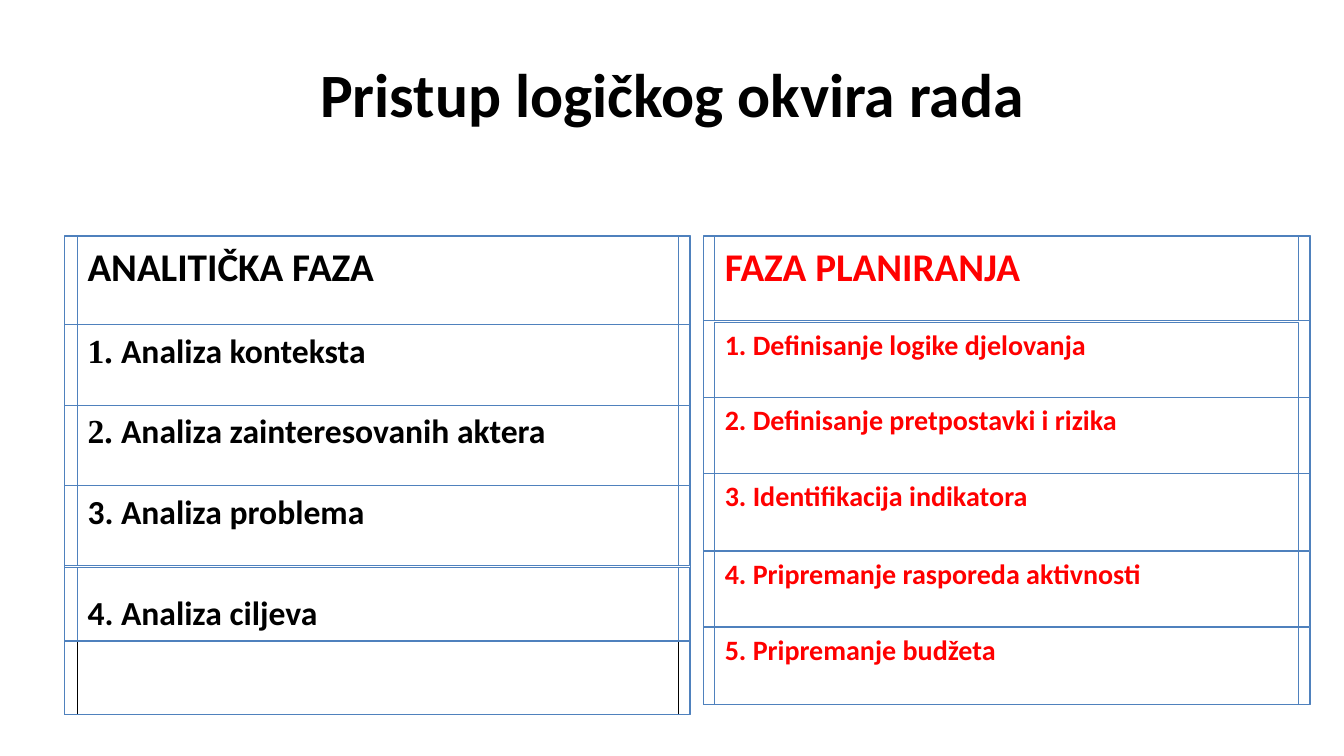
import pptx
import pptx.util
import pptx.dml.color
import pptx.enum.shapes
import pptx.enum.text

Inches = pptx.util.Inches
Pt = pptx.util.Pt
RGB = pptx.dml.color.RGBColor
BLACK = RGB(0x00, 0x00, 0x00)
RED = RGB(0xFF, 0x00, 0x00)
BLUE = RGB(0x4F, 0x81, 0xBD)
SANS = "Calibri"
SERIF = "Times New Roman"

# Each row: text runs, height, inner top drop, gap below, top inset, inner line
PLAIN = {"drop": 0, "gap": 0, "inset": 0.05, "line": BLUE}
LEFT = {
    "box": (0.64, 2.35, 6.2), "pad": (0.13, 0.11), "color": BLACK, "size": 24,
    "rows": [
        {"runs": [("ANALITIČKA FAZA", SANS)], "high": 0.87},
        {"runs": [("1. ", SERIF), ("Analiza konteksta", SANS)], "high": 0.8},
        {"runs": [("2. ", SERIF), ("Analiza zainteresovanih aktera", SANS)],
         "high": 0.8},
        {"runs": [("3. Analiza problema", SANS)], "high": 0.79, "gap": 0.02},
        {"runs": [("4. Analiza ciljeva", SANS)], "high": 0.73, "inset": 0.24},
        {"runs": [], "high": 0.73, "line": BLACK},
    ],
}
RIGHT = {
    "box": (6.98, 2.35, 6.01), "pad": (0.11, 0.11), "color": RED, "size": 20,
    "rows": [
        {"runs": [("FAZA PLANIRANJA", SANS)], "high": 0.83},
        {"runs": [("1. Definisanje logike djelovanja", SANS)],
         "high": 0.76, "drop": 0.02},
        {"runs": [("2. Definisanje pretpostavki i rizika", SANS)],
         "high": 0.76},
        {"runs": [("3. Identifikacija indikatora", SANS)],
         "high": 0.76, "gap": 0.01},
        {"runs": [("4. Pripremanje rasporeda aktivnosti", SANS)],
         "high": 0.75, "gap": 0.01},
        {"runs": [("5. Pripremanje budžeta", SANS)], "high": 0.76},
    ],
}
HEAD = 28


def style(item, form):
    for name, value in form.items():
        setattr(item, name, value)


def write(par, text, face, size, color):
    run = par.add_run()
    run.text = text
    style(run.font, {"name": face, "size": Pt(size), "bold": True})
    run.font.color.rgb = color


def frame(group, left, top, wide, high, color, width):
    rect = group.shapes.add_shape(
        pptx.enum.shapes.MSO_SHAPE.RECTANGLE,
        Inches(left), Inches(top), Inches(wide), Inches(high))
    rect.shadow.inherit = False
    rect.fill.background()
    rect.line.color.rgb = color
    rect.line.width = Pt(width)
    return rect


def title(slide, left, top, wide, high):
    head = slide.shapes.title
    style(head, {"left": Inches(left), "top": Inches(top),
                 "width": Inches(wide), "height": Inches(high)})
    head.text_frame.vertical_anchor = pptx.enum.text.MSO_ANCHOR.MIDDLE
    par = head.text_frame.paragraphs[0]
    par.alignment = pptx.enum.text.PP_ALIGN.CENTER
    write(par, "Pristup logičkog okvira rada", SANS, 44, BLACK)


def phase(slide, plan):
    group = slide.shapes.add_group_shape()
    left, start, wide = plan["box"]
    near, far = plan["pad"]
    top = start
    for index, part in enumerate(plan["rows"]):
        row = {**PLAIN, **part}
        # Inner cell with text
        cell = frame(group, left + near, top + row["drop"], wide - near - far,
                     row["high"] - row["drop"], row["line"], 0.75)
        body = cell.text_frame
        style(body, {"word_wrap": True, "margin_top": Inches(row["inset"]),
                     "vertical_anchor": pptx.enum.text.MSO_ANCHOR.TOP})
        par = body.paragraphs[0]
        par.alignment = pptx.enum.text.PP_ALIGN.LEFT
        size = plan["size"] if index else HEAD
        for text, face in row["runs"]:
            write(par, text, face, size, plan["color"])
        # Outer hairline of the row
        frame(group, left, top, wide, row["high"], BLUE, 0)
        top += row["high"] + row["gap"]
    # Border round the whole phase
    frame(group, left, start - 0.01, wide + 0.01, top - start + 0.01,
          BLUE, 0.87)


def main():
    deck = pptx.Presentation()
    style(deck, {"slide_width": Inches(13.33), "slide_height": Inches(7.5)})
    slide = deck.slides.add_slide(deck.slide_layouts[5])
    title(slide, 0.67, 0.3, 12, 1.25)
    for plan in (LEFT, RIGHT):
        phase(slide, plan)
    deck.save("out.pptx")


if __name__ == "__main__":
    main()
